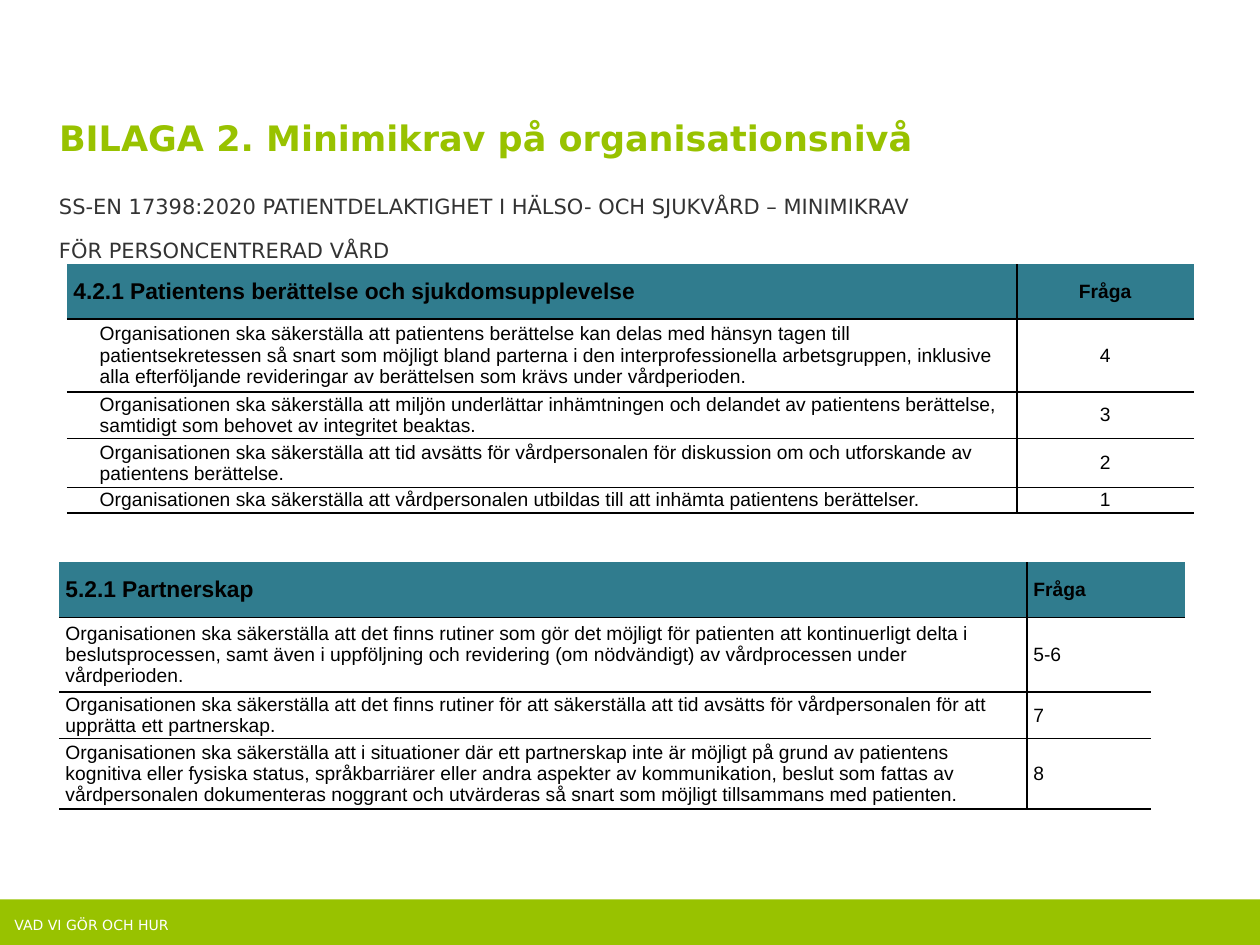
from lxml.etree import SubElement
from pptx import Presentation
from pptx.dml.color import RGBColor
from pptx.enum.shapes import MSO_SHAPE
from pptx.enum.text import MSO_ANCHOR, MSO_AUTO_SIZE, PP_ALIGN
from pptx.oxml.ns import qn
from pptx.util import Cm, Pt

GREEN = RGBColor(0x98, 0xC2, 0x00)
TEAL = RGBColor(0x30, 0x7C, 0x8E)
DARK = RGBColor(0x33, 0x33, 0x33)
BLACK = RGBColor(0, 0, 0)
WHITE = RGBColor(0xFF, 0xFF, 0xFF)
HEADING_FONT, TABLE_FONT = "DejaVu Sans", "Arial"

STORY_ROWS = [
    ("4.2.1 Patientens berättelse och sjukdomsupplevelse", "Fråga"),
    ("Organisationen ska säkerställa att patientens berättelse kan delas med hänsyn tagen till "
     "patientsekretessen så snart som möjligt bland parterna i den interprofessionella "
     "arbetsgruppen, inklusive alla efterföljande revideringar av berättelsen som krävs under "
     "vårdperioden.", "4"),
    ("Organisationen ska säkerställa att miljön underlättar inhämtningen och delandet av "
     "patientens berättelse, samtidigt som behovet av integritet beaktas.", "3"),
    ("Organisationen ska säkerställa att tid avsätts för vårdpersonalen för diskussion om och "
     "utforskande av patientens berättelse.", "2"),
    ("Organisationen ska säkerställa att vårdpersonalen utbildas till att inhämta patientens "
     "berättelser.", "1"),
]
PARTNERSHIP_ROWS = [
    ("5.2.1 Partnerskap", "Fråga"),
    ("Organisationen ska säkerställa att det finns rutiner som gör det möjligt för patienten att "
     "kontinuerligt delta i beslutsprocessen, samt även i uppföljning och revidering (om "
     "nödvändigt) av vårdprocessen under vårdperioden.", "5-6"),
    ("Organisationen ska säkerställa att det finns rutiner för att säkerställa att tid avsätts "
     "för vårdpersonalen för att upprätta ett partnerskap.", "7"),
    ("Organisationen ska säkerställa att i situationer där ett partnerskap inte är möjligt på "
     "grund av patientens kognitiva eller fysiska status, språkbarriärer eller andra aspekter av "
     "kommunikation, beslut som fattas av vårdpersonalen dokumenteras noggrant och utvärderas så "
     "snart som möjligt tillsammans med patienten.", "8"),
]


def add_span(para, text, size, color, font=HEADING_FONT, bold=False):
    span = para.add_run()
    span.text = text
    span.font.size, span.font.name, span.font.bold = Pt(size), font, bold
    span.font.color.rgb = color


def clear_margins(frame):
    frame.margin_left = frame.margin_right = frame.margin_top = frame.margin_bottom = 0
    frame.word_wrap = True
    frame.auto_size = MSO_AUTO_SIZE.NONE


def add_heading(page, left, top, width):
    """Place the title and, straight below it, the subtitle."""
    height = Cm(1.19)
    title = page.shapes.title
    title.left, title.top, title.width, title.height = left, top, Cm(21.49), height
    clear_margins(title.text_frame)
    title.text_frame.vertical_anchor = MSO_ANCHOR.TOP
    para = title.text_frame.paragraphs[0]
    para.alignment = PP_ALIGN.LEFT
    add_span(para, "BILAGA 2. Minimikrav på organisationsnivå", 20, GREEN, bold=True)

    subtitle = page.shapes.add_textbox(left, top + height, width, height)
    clear_margins(subtitle.text_frame)
    para = subtitle.text_frame.paragraphs[0]
    para.line_spacing = Pt(25)
    add_span(para, "SS-EN 17398:2020 PATIENTDELAKTIGHET I HÄLSO- OCH SJUKVÅRD – MINIMIKRAV "
                   "FÖR PERSONCENTRERAD VÅRD", 12, DARK)


def set_borders(cell, visible):
    """Draw the edges named in visible (L, R, T, B) and hide the others."""
    properties = cell._tc.get_or_add_tcPr()
    for index, edge in enumerate("LRTB"):
        line = properties.makeelement(qn(f"a:ln{edge}"), {"w": str(Pt(1))})
        if edge in visible:
            fill = SubElement(line, qn("a:solidFill"))
            SubElement(fill, qn("a:srgbClr"), val=str(BLACK))
        else:
            SubElement(line, qn("a:noFill"))
        properties.insert(index, line)


def find_edges(row, column, question_column):
    """Rules run under the header and, below it, as far as the question column."""
    edges = set()
    if column == question_column:
        edges.add("L")
    if column == question_column - 1:
        edges.add("R")
    if row == 0 or column <= question_column:
        edges.add("B")
    if row == 1 or (row > 1 and column <= question_column):
        edges.add("T")
    return edges


def fill_cell(cell, text, size, bold, alignment):
    para = cell.text_frame.paragraphs[0]
    para.alignment = alignment
    if text:
        add_span(para, text, size, BLACK, TABLE_FONT, bold)
    else:
        SubElement(para._p, qn("a:endParaRPr"), sz="800")


def add_requirements(page, left, top, widths, heights, rows, question_column, alignment):
    """Place a table whose text column stands just before the question column."""
    frame = page.shapes.add_table(len(rows), len(widths), left, top,
                                  Cm(sum(widths)), Cm(sum(heights)))
    table = frame.table
    table.first_row = table.horz_banding = False
    for column, width in zip(table.columns, widths):
        column.width = Cm(width)
    for row, height in zip(table.rows, heights):
        row.height = Cm(height)

    text_column = question_column - 1
    last_column = len(widths) - 1
    table.cell(0, 0).merge(table.cell(0, text_column))
    table.cell(0, question_column).merge(table.cell(0, last_column))

    for r, (requirement, question) in enumerate(rows):
        header = r == 0
        places = {0 if header else text_column: requirement, question_column: question}
        for c in range(len(widths)):
            cell = table.cell(r, c)
            cell.margin_left = cell.margin_right = Cm(0.13)
            cell.margin_top = cell.margin_bottom = 0
            cell.vertical_anchor = MSO_ANCHOR.MIDDLE
            if header:
                cell.fill.solid()
                cell.fill.fore_color.rgb = TEAL
            else:
                cell.fill.background()
            set_borders(cell, find_edges(r, c, question_column))
            is_question = c == question_column
            fill_cell(cell, places.get(c), 13 if header and not is_question else 11, header,
                      alignment if is_question else PP_ALIGN.LEFT)


def add_footer(page, left, top, width, height):
    band = page.shapes.add_shape(MSO_SHAPE.RECTANGLE, left, top, width, height)
    band.shadow.inherit = False
    band.fill.solid()
    band.fill.fore_color.rgb = GREEN
    band.line.fill.background()
    label = page.shapes.add_textbox(left + Cm(0.04), top + Cm(0.18), Cm(3.91), Cm(0.64))
    label.text_frame.word_wrap = False
    para = label.text_frame.paragraphs[0]
    para.line_spacing = 1.1
    add_span(para, "VAD VI GÖR OCH HUR", 8, WHITE)


def main():
    deck = Presentation()
    deck.slide_width, deck.slide_height = Cm(25.4), Cm(19.05)
    page = deck.slides.add_slide(deck.slide_layouts[5])
    margin = Cm(1.19)
    add_footer(page, 0, Cm(18.13), deck.slide_width, Cm(0.92))
    add_heading(page, margin, Cm(2.34), Cm(17.7))
    add_requirements(page, Cm(1.35), Cm(5.33), [0.53, 18.62, 3.56],
                     [1.1, 1.47, 0.94, 0.99, 0.51], STORY_ROWS, 2, PP_ALIGN.CENTER)
    add_requirements(page, margin, Cm(11.33), [19.51, 2.51, 0.69],
                     [1.12, 1.5, 0.94, 1.42], PARTNERSHIP_ROWS, 1, PP_ALIGN.LEFT)
    deck.save("out.pptx")


if __name__ == "__main__":
    main()
